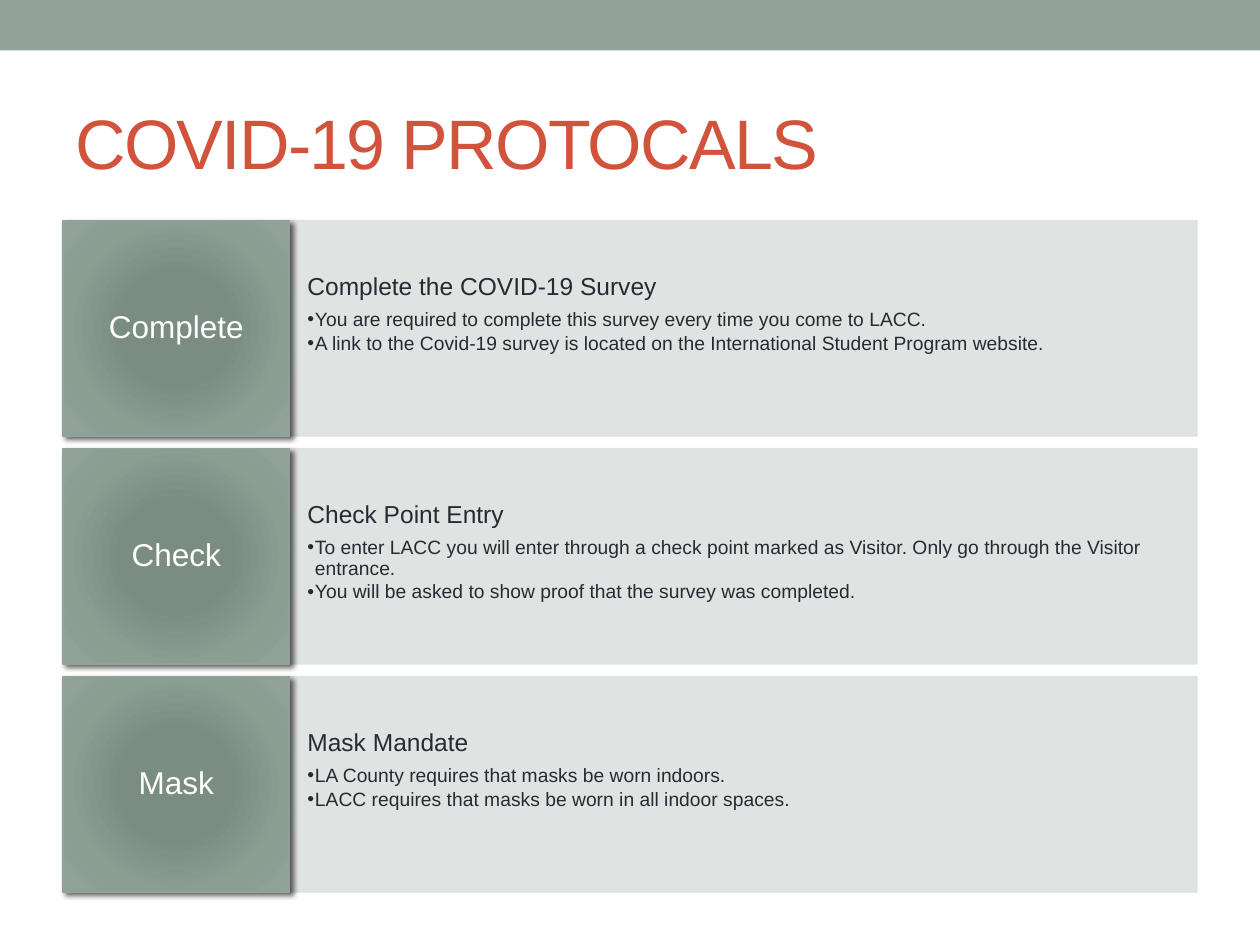
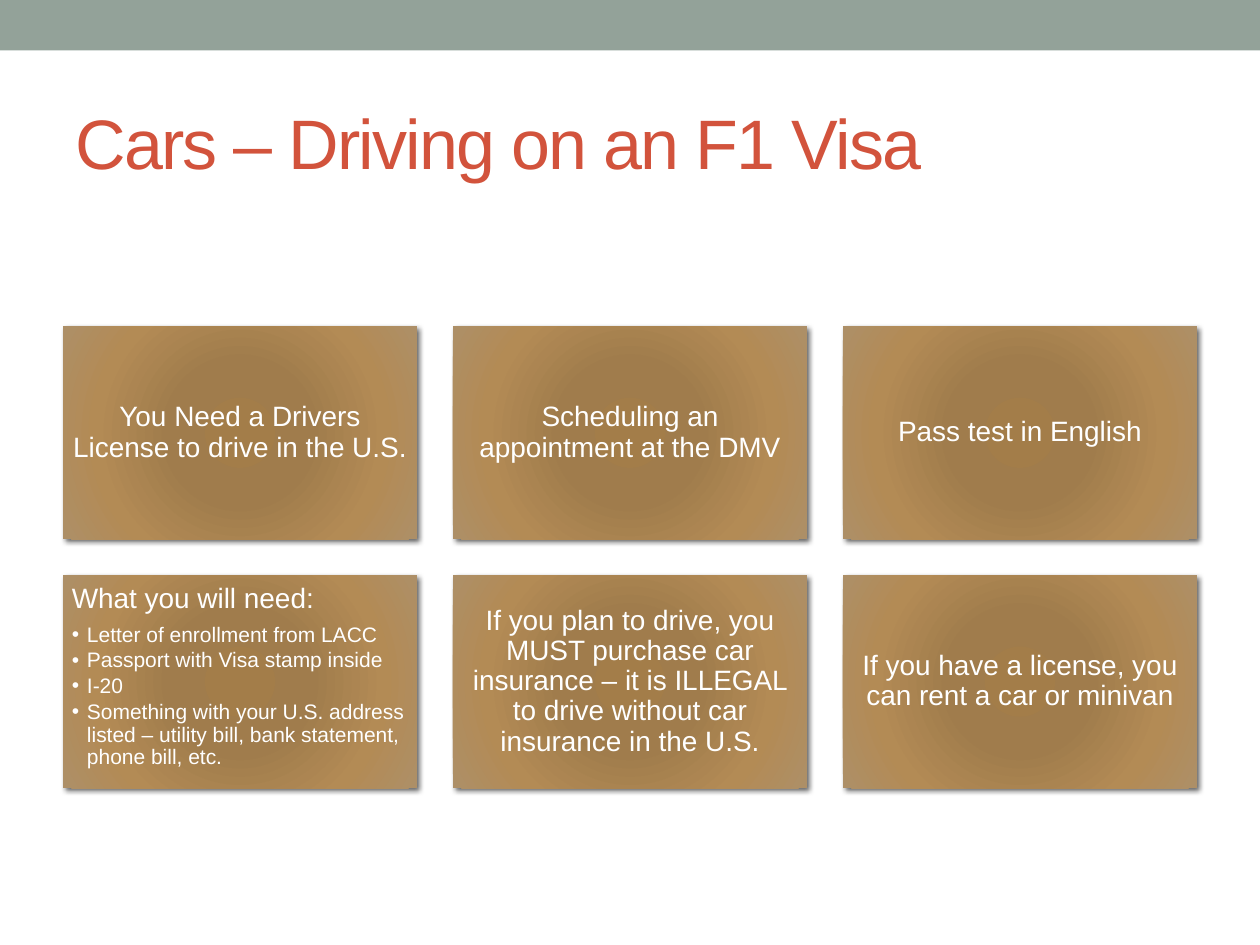
from lxml import etree
from pptx import Presentation
from pptx import util as u
from pptx.dml.color import RGBColor
from pptx.enum import shapes, text
from pptx.oxml import ns

SAGE = RGBColor(0x93, 0xA2, 0x99)
BRICK = RGBColor(0xD2, 0x53, 0x3C)
MIST = RGBColor(0xDC, 0xE0, 0xDE)
INK = RGBColor(0x29, 0x29, 0x34)
WHITE = RGBColor(0xFF, 0xFF, 0xFF)
SAGE_GLOW = ("7B8E82", "7B8D83", "8A9E92", "93A299")
GOLD_GLOW = ("A37D49", "A07C4C", "B38B55", "AD8F67")
GLOW_STOPS = (0, 34, 70, 100)
FONT = "Arial"
LEFT, WIDTH = 0.5, 9

PROTOCOLS = [
    ("Complete", "Complete the COVID-19 Survey", [
        "You are required to complete this survey every time you come to LACC.",
        "A link to the Covid-19 survey is located on the International Student Program website."]),
    ("Check", "Check Point Entry", [
        "To enter LACC you will enter through a check point marked as Visitor. "
        "Only go through the Visitor entrance.",
        "You will be asked to show proof that the survey was completed."]),
    ("Mask", "Mask Mandate", [
        "LA County requires that masks be worn indoors.",
        "LACC requires that masks be worn in all indoor spaces."]),
]
DRIVING = [
    ("You Need a Drivers License to drive in the U.S.", []),
    ("Scheduling an appointment at the DMV", []),
    ("Pass test in English", []),
    ("What you will need:", [
        "Letter of enrollment from LACC",
        "Passport with Visa stamp inside",
        "I-20",
        "Something with your U.S. address listed – utility bill, bank statement, phone bill, etc."]),
    ("If you plan to drive, you MUST purchase car insurance – it is ILLEGAL "
     "to drive without car insurance in the U.S.", []),
    ("If you have a license, you can rent a car or minivan", []),
]


def apply(target, values):
    """Set each named attribute of the target."""
    for name, value in values.items():
        setattr(target, name, value)


def element(parent, tag, **attrs):
    """Append a DrawingML child element."""
    return etree.SubElement(parent, ns.qn(f"a:{tag}"), {k: str(v) for k, v in attrs.items()})


def add_rect(s, box, color=None, line=None):
    """Draw a flat rectangle in the given box."""
    sp = s.shapes.add_shape(shapes.MSO_SHAPE.RECTANGLE, *map(u.Inches, box))
    sp.shadow.inherit = False
    if color is None:
        sp.fill.background()
    else:
        sp.fill.solid()
        sp.fill.fore_color.rgb = color
    if line is None:
        sp.line.fill.background()
    else:
        sp.line.color.rgb = line
        sp.line.width = u.Pt(0.75)
    return sp


def add_glow_tile(s, box, colors, line=None):
    """Draw a rectangle with a radial gradient and a soft shadow."""
    sp = add_rect(s, box, line=line)
    props = sp._element.spPr
    grad = etree.Element(ns.qn("a:gradFill"), rotWithShape="1")
    stops = element(grad, "gsLst")
    for position, color in zip(GLOW_STOPS, colors):
        element(element(stops, "gs", pos=position * 1000), "srgbClr", val=color)
    circle = element(grad, "path", path="circle")
    element(circle, "fillToRect", **dict.fromkeys("ltrb", 100000))
    props.replace(props.find(ns.qn("a:noFill")), grad)
    shadow = element(props.find(ns.qn("a:effectLst")), "outerShdw", blurRad=u.Pt(3),
                     dist=u.Pt(2), dir=45 * 60000, algn="ctr", rotWithShape=0)
    element(element(shadow, "srgbClr", val="000000"), "alpha", val=60000)
    return sp


def set_frame(sp, anchor, across, down):
    """Set the anchor and insets of a wrapping text frame."""
    tf = sp.text_frame
    x, y = u.Inches(across), u.Inches(down)
    apply(tf, {"word_wrap": True, "vertical_anchor": anchor, "margin_left": x,
               "margin_right": x, "margin_top": y, "margin_bottom": y})
    return tf


def write(p, words, size, color, align=text.PP_ALIGN.LEFT, after=0.35, hang=None):
    """Fill a paragraph, with a hanging bullet when hang is given."""
    apply(p, {"alignment": align, "line_spacing": 0.9, "space_before": u.Pt(0),
              "space_after": u.Pt(size * after)})
    if hang:
        p.level = 1
        props = p._p.get_or_add_pPr()
        props.set("marL", str(u.Inches(hang)))
        props.set("indent", str(-u.Inches(hang)))
        element(props, "buFont", typeface=FONT)
        element(props, "buChar", char="•")
    r = p.add_run()
    r.text = words
    apply(r.font, {"name": FONT, "size": u.Pt(size)})
    r.font.color.rgb = color
    return r


def write_list(tf, heading, bullets, sizes, color, hang):
    """Write a heading followed by its bullets."""
    write(tf.paragraphs[0], heading, sizes[0], color)
    for bullet in bullets:
        write(tf.add_paragraph(), bullet, sizes[1], color, after=0.15, hang=hang)


def add_base(prs, title):
    """Add a blank slide with the top band and a title."""
    s = prs.slides.add_slide(prs.slide_layouts[6])
    add_rect(s, (0, 0, 10, 0.4), SAGE)
    sp = s.shapes.add_textbox(*map(u.Inches, (LEFT, 0.58, WIDTH, 1.08)))
    tf = set_frame(sp, text.MSO_ANCHOR.MIDDLE, 0.1, 0.05)
    r = write(tf.paragraphs[0], title, 40, BRICK, after=0)
    tf.paragraphs[0].line_spacing = 1.0
    r._r.get_or_add_rPr().set("spc", "-100")
    return s


def add_protocol_row(s, box, label, heading, bullets):
    """Place a label tile and its detail panel in one row."""
    x, y, w, h = box
    tile = 0.2 * w
    panel = add_rect(s, (x + tile, y, w - tile, h), MIST, MIST)
    for color in panel._element.spPr.iter(ns.qn("a:srgbClr")):
        element(color, "alpha", val=90000)
    tf = set_frame(panel, text.MSO_ANCHOR.TOP, 0.14, 0.43)
    write_list(tf, heading, bullets, (14, 11), INK, 0.06)
    sp = add_glow_tile(s, (x, y, tile, h), SAGE_GLOW, SAGE)
    tf = set_frame(sp, text.MSO_ANCHOR.MIDDLE, 0.1, 0.17)
    write(tf.paragraphs[0], label, 18, WHITE, text.PP_ALIGN.CENTER)


def add_driving_card(s, box, heading, bullets):
    """Place one gold card, listed from the top when it has bullets."""
    sp = add_glow_tile(s, box, GOLD_GLOW)
    if bullets:
        tf = set_frame(sp, text.MSO_ANCHOR.TOP, 0.07, 0.07)
        write_list(tf, heading, bullets, (16, 12), WHITE, 0.12)
    else:
        tf = set_frame(sp, text.MSO_ANCHOR.MIDDLE, 0.07, 0.07)
        write(tf.paragraphs[0], heading, 16, WHITE, text.PP_ALIGN.CENTER)


def build_protocols(prs):
    """Build the slide of protocol rows."""
    s = add_base(prs, "COVID-19 PROTOCALS")
    for i, row in enumerate(PROTOCOLS):
        add_protocol_row(s, (LEFT, 1.75 + i * 1.81, WIDTH, 1.71), *row)


def build_driving(prs):
    """Build the slide with a grid of driving cards."""
    s = add_base(prs, "Cars – Driving on an F1 Visa")
    columns, w, h = 3, 2.81, 1.69
    gap = (WIDTH - columns * w) / (columns - 1)
    for i, card in enumerate(DRIVING):
        row, column = divmod(i, columns)
        box = (LEFT + column * (w + gap), 2.59 + row * (h + gap), w, h)
        add_driving_card(s, box, *card)


def main():
    """Build and save the presentation."""
    prs = Presentation()
    apply(prs, {"slide_width": u.Inches(10), "slide_height": u.Inches(7.5)})
    build_protocols(prs)
    build_driving(prs)
    prs.save("out.pptx")


if __name__ == "__main__":
    main()
